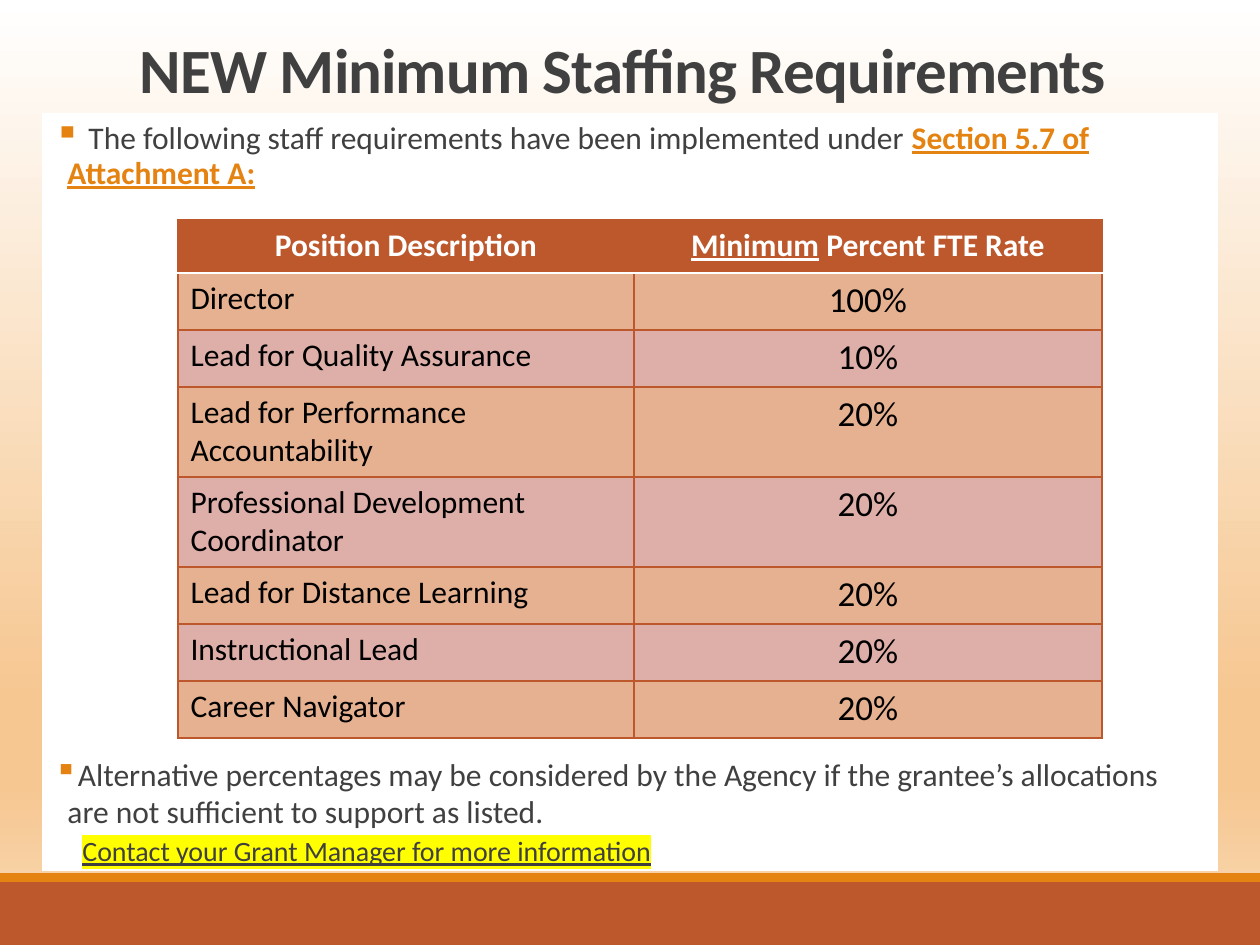
from dataclasses import dataclass

from lxml.etree import SubElement
from pptx import Presentation
from pptx.dml.color import RGBColor
from pptx.enum.shapes import MSO_SHAPE
from pptx.enum.text import MSO_ANCHOR, PP_ALIGN
from pptx.oxml.ns import qn
from pptx.util import Emu, Pt


@dataclass(frozen=True)
class Theme:
    font: str = "Calibri"
    ink: str = "404040"
    black: str = "000000"
    white: str = "FFFFFF"
    rust: str = "BD582C"
    orange: str = "E48312"
    yellow: str = "FFFF00"
    bands: tuple = ("E6B190", "DEAFA8")
    backdrop: tuple = ((0, "FFFFFF"), (74, "F6C791"), (83, "F6C791"), (100, "F9DAB6"))
    title: int = 36
    large: int = 20
    body: int = 18
    small: int = 16


THEME = Theme()
EMU_PER_PX = 914400 / 126
ROWS = [
    ("Director", "100%", 57),
    ("Lead for Quality Assurance", "10%", 57),
    ("Lead for Performance Accountability", "20%", 90),
    ("Professional Development Coordinator", "20%", 90),
    ("Lead for Distance Learning", "20%", 57),
    ("Instructional Lead", "20%", 57),
    ("Career Navigator", "20%", 57),
]


def px(length):
    return Emu(round(length * EMU_PER_PX))


def add_solid(parent, color):
    fill = SubElement(parent, qn("a:solidFill"))
    SubElement(fill, qn("a:srgbClr"), val=color)


class SlideBuilder:
    """Draws styled elements on the current slide."""

    def __init__(self, page, theme):
        self.page = page
        self.theme = theme

    def background(self):
        fill = self.page.background.fill
        fill.gradient()
        gradient = self.page.background._cSld.find(".//" + qn("a:gradFill"))
        stops = gradient.find(qn("a:gsLst"))
        for stop in list(stops):
            stops.remove(stop)
        for position, color in self.theme.backdrop:
            stop = SubElement(stops, qn("a:gs"), pos=str(position * 1000))
            SubElement(stop, qn("a:srgbClr"), val=color)
        gradient.find(qn("a:lin")).set("ang", "5400000")

    def rectangle(self, left, top, width, height, color):
        box = self.page.shapes.add_shape(
            MSO_SHAPE.RECTANGLE, px(left), px(top), px(width), px(height))
        box.shadow.inherit = False
        box.fill.solid()
        box.fill.fore_color.rgb = RGBColor.from_string(color)
        box.line.fill.background()
        frame = box.text_frame
        frame.word_wrap = True
        frame.vertical_anchor = MSO_ANCHOR.TOP
        return frame

    def textbox(self, left, top, width, height, anchor):
        box = self.page.shapes.add_textbox(px(left), px(top), px(width), px(height))
        frame = box.text_frame
        frame.word_wrap = True
        frame.vertical_anchor = anchor
        return frame

    def paragraph(self, para, align=PP_ALIGN.LEFT, spacing=1.0, before=0, after=0,
                  margin=0, indent=0, bullet=None):
        para.alignment = align
        para.line_spacing = spacing
        para.space_before = Pt(before)
        para.space_after = Pt(after)
        properties = para._p.get_or_add_pPr()
        properties.set("marL", str(px(margin)))
        properties.set("indent", str(px(indent)))
        if bullet:
            color = SubElement(properties, qn("a:buClr"))
            SubElement(color, qn("a:srgbClr"), val=self.theme.orange)
            SubElement(properties, qn("a:buChar"), char=bullet)
        return para

    def run(self, para, text, size, color, bold=False, underline=False,
            highlight=None, tracking=None):
        span = para.add_run()
        span.text = text
        font = span.font
        font.name = self.theme.font
        font.size = Pt(size)
        font.bold = bold
        font.underline = underline
        font.color.rgb = RGBColor.from_string(color)
        properties = span._r.get_or_add_rPr()
        if highlight:
            marker = SubElement(properties, qn("a:highlight"))
            SubElement(marker, qn("a:srgbClr"), val=highlight)
            properties.find(qn("a:solidFill")).addnext(marker)
        if tracking:
            properties.set("spc", str(tracking))

    def table(self, left, top, widths, heights):
        table = self.page.shapes.add_table(
            len(heights), len(widths), px(left), px(top),
            px(sum(widths)), px(sum(heights))).table
        table.first_row = table.horz_banding = False
        for column, width in zip(table.columns, widths):
            column.width = px(width)
        for row, height in zip(table.rows, heights):
            row.height = px(height)
        return table

    def cell(self, cell, fill, align, top=None, bottom=None):
        properties = cell._tc.get_or_add_tcPr()
        rust = self.theme.rust
        edges = {"lnL": rust, "lnR": rust, "lnT": top or rust, "lnB": bottom or rust}
        for edge, color in edges.items():
            points = 1 if color == rust else 1.25
            add_solid(SubElement(properties, qn("a:" + edge), w=str(Pt(points))), color)
        cell.fill.solid()
        cell.fill.fore_color.rgb = RGBColor.from_string(fill)
        return self.paragraph(cell.text_frame.paragraphs[0], align)


def add_body(builder):
    theme = builder.theme
    frame = builder.rectangle(42, 113, 1176, 758, theme.white)
    para = builder.paragraph(frame.paragraphs[0], spacing=0.9, after=2,
                             margin=13, indent=-13, bullet="▪")
    builder.run(para, " ", theme.large, theme.ink)
    builder.run(para, "The following staff requirements have been implemented under ",
                theme.body, theme.ink)
    builder.run(para, "Section 5.7 of Attachment A:", theme.body, theme.orange,
                bold=True, underline=True)
    para = builder.paragraph(frame.add_paragraph(), before=320, after=2,
                             margin=13, indent=-13, bullet="▪")
    builder.run(para, "Alternative percentages may be considered by the Agency if the "
                "grantee’s allocations are not sufficient to support as listed.",
                theme.body, theme.ink)
    para = builder.paragraph(frame.add_paragraph(), spacing=0.9, before=2, after=4,
                             margin=28)
    builder.run(para, "Contact your Grant Manager for more information", theme.small,
                theme.ink, underline=True, highlight=theme.yellow)


def add_staffing_table(builder):
    theme = builder.theme
    table = builder.table(178, 220, [456, 468], [53] + [row[2] for row in ROWS])
    headers = [[("Position Description", False)],
               [("Minimum", True), (" Percent FTE Rate", False)]]
    for column, parts in enumerate(headers):
        para = builder.cell(table.cell(0, column), theme.rust, PP_ALIGN.CENTER,
                            bottom=theme.white)
        for text, underline in parts:
            builder.run(para, text, theme.body, theme.white, bold=True,
                        underline=underline)
    for index, (position, rate, _) in enumerate(ROWS):
        fill = theme.bands[index % 2]
        top = None if index else theme.white
        para = builder.cell(table.cell(index + 1, 0), fill, PP_ALIGN.LEFT, top)
        builder.run(para, position, theme.body, theme.black)
        para = builder.cell(table.cell(index + 1, 1), fill, PP_ALIGN.CENTER, top)
        builder.run(para, rate, theme.large, theme.black)


def main():
    deck = Presentation()
    deck.slide_width, deck.slide_height = px(1260), px(945)
    page = deck.slides.add_slide(deck.slide_layouts[6])
    builder = SlideBuilder(page, THEME)
    builder.background()
    builder.rectangle(0, 882, 1260, 63, THEME.rust)
    builder.rectangle(0, 873, 1260, 9, THEME.orange)
    add_body(builder)
    add_staffing_table(builder)
    title = builder.textbox(116, 21, 1014, 92, MSO_ANCHOR.BOTTOM)
    para = builder.paragraph(title.paragraphs[0], PP_ALIGN.CENTER, spacing=0.85)
    builder.run(para, "NEW Minimum Staffing Requirements", THEME.title, THEME.ink,
                bold=True, tracking=-50)
    deck.save("out.pptx")


if __name__ == "__main__":
    main()
